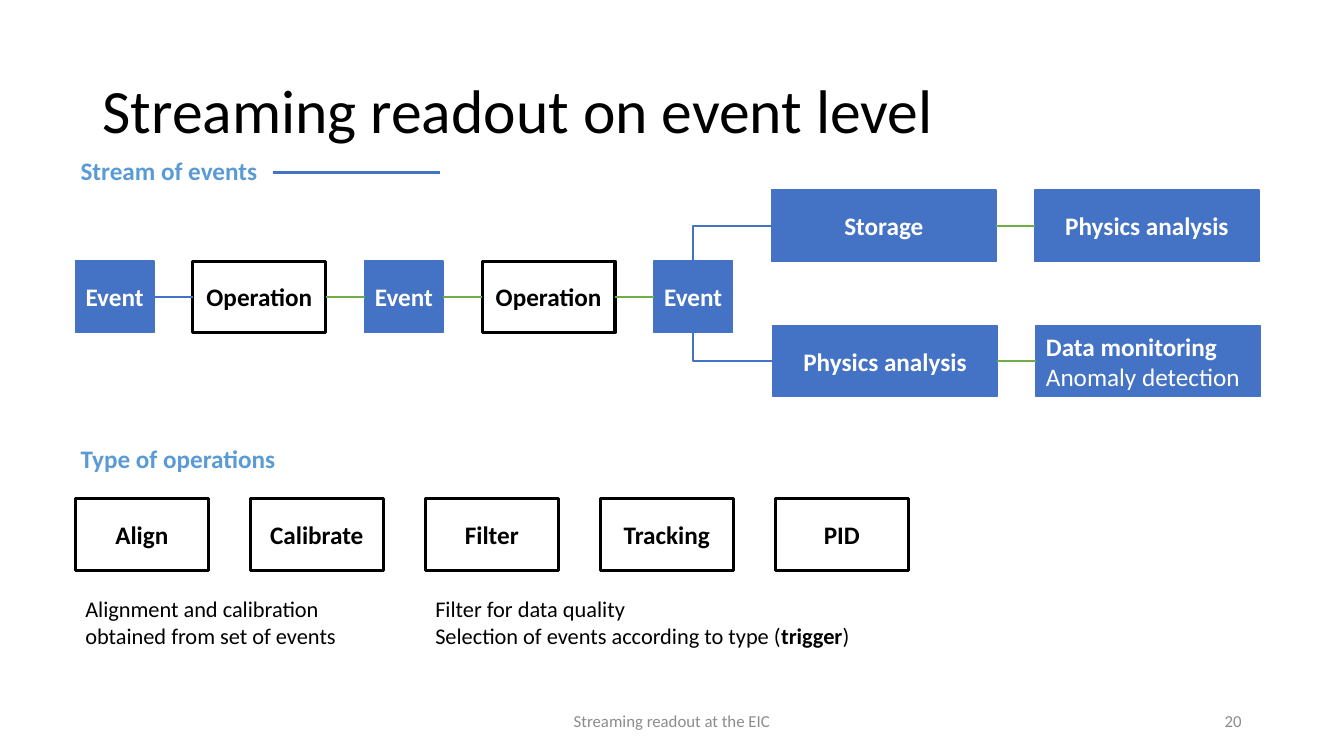
from pptx import Presentation
from pptx.dml.color import RGBColor
from pptx.enum.shapes import MSO_CONNECTOR, MSO_SHAPE
from pptx.enum.text import MSO_ANCHOR, MSO_AUTO_SIZE, PP_ALIGN
from pptx.oxml.ns import qn
from pptx.util import Cm, Pt
from lxml import etree

BLUE = RGBColor(0x44, 0x72, 0xC4)
SKY = RGBColor(0x5B, 0x9B, 0xD5)
GREEN = RGBColor(0x70, 0xAD, 0x47)
GREY = RGBColor(0x8C, 0x8C, 0x8C)
BLACK = RGBColor(0, 0, 0)
WHITE = RGBColor(0xFF, 0xFF, 0xFF)

RECTANGLE = MSO_SHAPE.RECTANGLE
STRAIGHT, ELBOW = MSO_CONNECTOR.STRAIGHT, MSO_CONNECTOR.ELBOW
LEFT, CENTER, RIGHT = PP_ALIGN.LEFT, PP_ALIGN.CENTER, PP_ALIGN.RIGHT
MIDDLE, TOP = MSO_ANCHOR.MIDDLE, MSO_ANCHOR.TOP
NO_AUTOFIT = MSO_AUTO_SIZE.NONE

TOP_SITE, LEFT_SITE, BOTTOM_SITE, RIGHT_SITE = range(4)
EVENT_WIDTH, OPERATION_WIDTH, TARGET_WIDTH = 1.98, 3.35, 5.65
BOX_HEIGHT, FLOW_GAP, OPERATION_PITCH = 1.8, 0.98, 4.41


def write(frame, lines, size, color, align=LEFT, anchor=TOP):
    """Fill a text frame with lines, each a list of (text, bold) spans."""
    frame.word_wrap = True
    frame.auto_size = NO_AUTOFIT
    frame.vertical_anchor = anchor
    for index, spans in enumerate(lines):
        para = frame.paragraphs[0] if index == 0 else frame.add_paragraph()
        para.alignment = align
        for text, bold in spans:
            span = para.add_run()
            span.text = text
            span.font.name = "Calibri"
            span.font.size = Pt(size)
            span.font.bold = bold
            span.font.color.rgb = color


def add_title(page, text):
    """Place and fill the title placeholder."""
    title = page.shapes.title
    title.left, title.top = Cm(2.33), Cm(1.01)
    title.width, title.height = Cm(29.21), Cm(3.68)
    write(title.text_frame, [[(text, False)]], 44, BLACK, anchor=MIDDLE)
    title.text_frame.paragraphs[0].line_spacing = 0.9


def add_label(page, left, top, width, height, lines, size, color, align=LEFT, anchor=TOP):
    """Add a text box."""
    label = page.shapes.add_textbox(Cm(left), Cm(top), Cm(width), Cm(height))
    write(label.text_frame, lines, size, color, align, anchor)


def add_box(page, left, top, width, lines, align=CENTER, filled=True):
    """Add a filled blue box or an outlined black one."""
    box = page.shapes.add_shape(RECTANGLE, Cm(left), Cm(top), Cm(width), Cm(BOX_HEIGHT))
    box.shadow.inherit = False
    if filled:
        box.fill.solid()
        box.fill.fore_color.rgb = BLUE
    else:
        box.fill.background()
    box.line.color.rgb = BLUE if filled else BLACK
    box.line.width = Pt(1 if filled else 2.25)
    write(box.text_frame, lines, 18, WHITE if filled else BLACK, align, MIDDLE)
    return box


def add_operation(page, left, top, name):
    """Add an outlined operation box."""
    return add_box(page, left, top, OPERATION_WIDTH, [[(name, True)]], filled=False)


def add_line(page, kind, color, width, ends=(0, 0, 0, 0)):
    """Add a connector without shadow."""
    line = page.shapes.add_connector(kind, *[Cm(value) for value in ends])
    line.line.color.rgb = color
    line.line.width = Pt(width)
    etree.SubElement(line._element.spPr, qn("a:effectLst"))
    return line


def join(page, start, end, color):
    """Join the right side of one box to the left side of the next."""
    line = add_line(page, STRAIGHT, color, 1.5)
    line.begin_connect(start, RIGHT_SITE)
    line.end_connect(end, LEFT_SITE)


def branch(page, target, event, event_site):
    """Join a target box to an event with a single right-angle bend."""
    line = add_line(page, ELBOW, BLUE, 1.5)
    line._element.spPr.find(qn("a:prstGeom")).set("prst", "bentConnector2")
    line.begin_connect(target, LEFT_SITE)
    line.end_connect(event, event_site)


def add_event_flow(page):
    """Draw the chain of events and operations and return the last event."""
    left, previous = 1.9, None
    for index, name in enumerate(["Event", "Operation", "Event", "Operation", "Event"]):
        if name == "Event":
            width = EVENT_WIDTH
            box = add_box(page, left, 6.58, width, [[(name, True)]])
        else:
            width = OPERATION_WIDTH
            box = add_operation(page, left, 6.58, name)
        if previous is not None:
            join(page, previous, box, BLUE if index == 1 else GREEN)
        left, previous = left + width + FLOW_GAP, box
    return previous


def add_targets(page, event):
    """Draw the two branches that leave the last event."""
    analysis = [[("Physics analysis", True)]]
    monitoring = [[("Data monitoring", True)], [("Anomaly detection", False)]]
    rows = [
        (19.45, 4.79, [[("Storage", True)]], analysis, CENTER, TOP_SITE),
        (19.48, 8.2, analysis, monitoring, LEFT, BOTTOM_SITE),
    ]
    for left, top, first_lines, second_lines, align, site in rows:
        first = add_box(page, left, top, TARGET_WIDTH, first_lines)
        second_left = left + TARGET_WIDTH + FLOW_GAP
        second = add_box(page, second_left, top, TARGET_WIDTH, second_lines, align)
        branch(page, first, event, site)
        join(page, first, second, GREEN)


def main():
    """Build and save the deck."""
    deck = Presentation()
    deck.slide_width, deck.slide_height = Cm(33.87), Cm(19.05)
    page = deck.slides.add_slide(deck.slide_layouts[5])
    add_title(page, "Streaming readout on event level")

    for top, heading in [(3.78, "Stream of events"), (11.05, "Type of operations")]:
        add_label(page, 1.78, top, 9.3, 1.03, [[(heading, True)]], 18, SKY)
    add_line(page, STRAIGHT, BLUE, 2.25, (6.87, 4.35, 11.08, 4.35))
    add_targets(page, add_event_flow(page))

    for index, name in enumerate(["Align", "Calibrate", "Filter", "Tracking", "PID"]):
        add_operation(page, 1.9 + index * OPERATION_PITCH, 12.57, name)
    alignment = [[("Alignment and calibration obtained from set of events", False)]]
    selection = [
        [("Filter for data quality", False)],
        [("Selection of events according to type (", False), ("trigger", True), (")", False)],
    ]
    add_label(page, 1.9, 14.88, 7.75, 1.62, alignment, 16, BLACK)
    add_label(page, 10.72, 14.88, 12.17, 1.62, selection, 16, BLACK)

    footer = [[("Streaming readout at the EIC", False)]]
    add_label(page, 11.22, 17.66, 11.43, 1.01, footer, 12, GREY, CENTER, MIDDLE)
    add_label(page, 23.92, 17.66, 7.62, 1.01, [[("20", False)]], 12, GREY, RIGHT, MIDDLE)
    deck.save("out.pptx")


if __name__ == "__main__":
    main()
